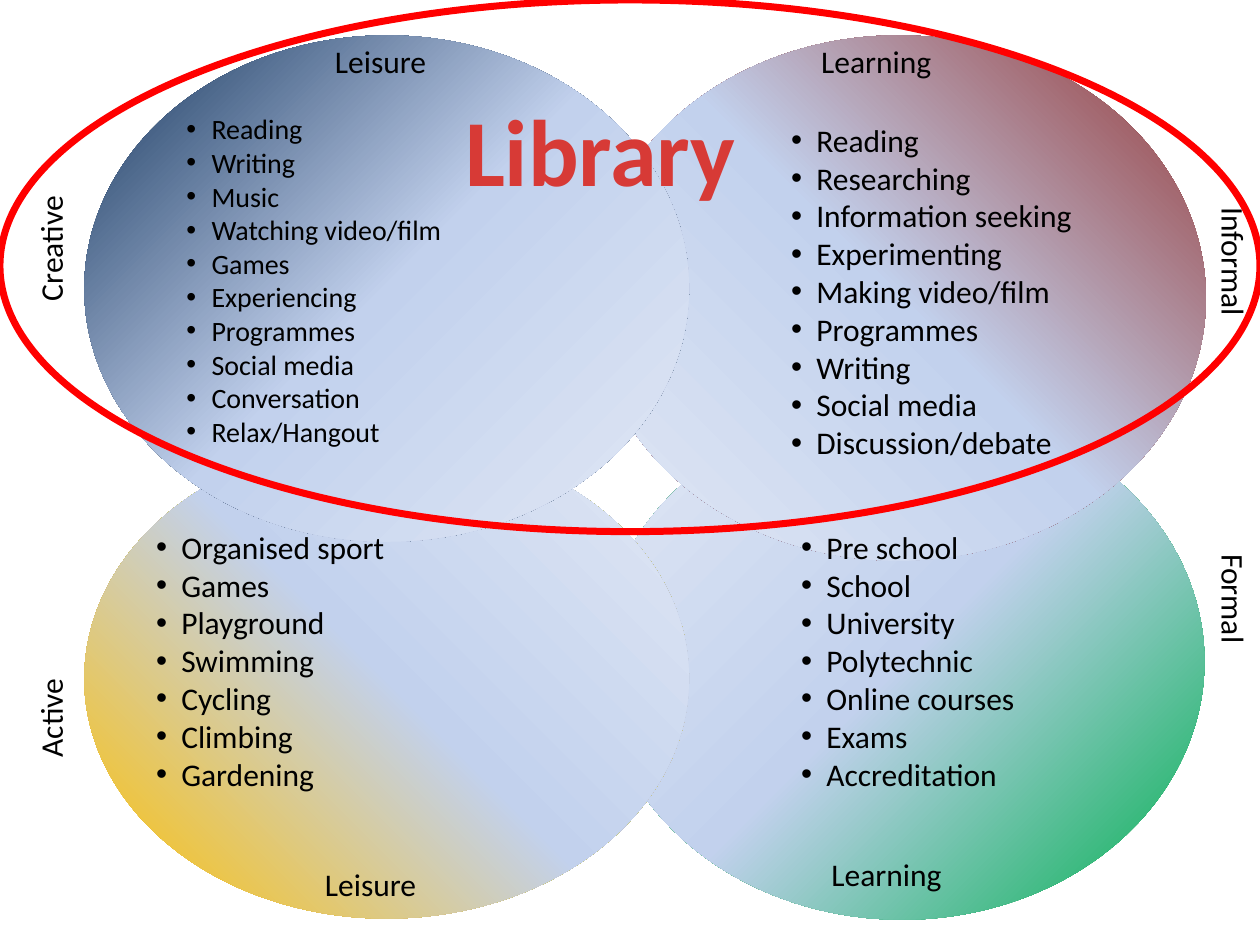
from copy import deepcopy
from dataclasses import dataclass

from lxml import etree
from pptx import Presentation
from pptx import util as u
from pptx.dml.color import RGBColor
from pptx.enum import shapes, text
from pptx.oxml.ns import qn


@dataclass(frozen=True)
class Theme:
    font: str = "Calibri"
    ink: str = "000000"
    ring: str = "FF0000"
    title: str = "D73A36"
    mid: str = "C2D1ED"
    pale: str = "E1E8F5"
    small: float = 16
    body: float = 18
    large: float = 54
    edge: float = 4
    rim: float = 1.42
    hang: float = 14.4


@dataclass(frozen=True)
class Box:
    x: float
    y: float
    w: float
    h: float

    def place(self) -> tuple:
        return tuple(u.Pt(v) for v in (self.x, self.y, self.w, self.h))


@dataclass(frozen=True)
class Circle:
    box: Box
    hue: str
    angle: float


@dataclass(frozen=True)
class Label:
    words: str
    box: Box
    turn: str = "horz"


@dataclass(frozen=True)
class Topic:
    items: tuple
    box: Box
    size: float


THEME = Theme()

CIRCLES = (
    Circle(Box(342.7, 230.4, 345.6, 295.2), "00B050", 135),
    Circle(Box(48.2, 250.6, 345.6, 274.3), "FFC000", 45),
    Circle(Box(337.7, 20.2, 351.4, 300.2), "953735", 225),
    Circle(Box(48.2, 20.2, 345.6, 289.4), "17375E", 315),
)

LABELS = (
    Label("Learning", Box(462.2, 20.2, 102.2, 29.1)),
    Label("Leisure", Box(184.3, 20.2, 147.6, 29.1)),
    Label("Creative", Box(14.4, 66.2, 36.4, 113), "vert270"),
    Label("Active", Box(14.4, 326.9, 36.4, 113), "vert270"),
    Label("Informal", Box(683.3, 111.6, 36.4, 102.2), "vert"),
    Label("Formal", Box(683.3, 309.6, 36.4, 102.2), "vert"),
    Label("Leisure", Box(178.6, 491, 147.6, 29.1)),
    Label("Learning", Box(468, 485.3, 102.2, 29.1)),
)

TOPICS = (
    Topic(("Reading", "Writing", "Music", "Watching video/film", "Games",
           "Experiencing", "Programmes", "Social media", "Conversation",
           "Relax/Hangout"), Box(99.4, 60.5, 215.3, 223.2), THEME.small),
    Topic(("Reading", "Researching", "Information seeking", "Experimenting",
           "Making video/film", "Programmes", "Writing", "Social media",
           "Discussion/debate"), Box(445, 65.5, 215.3, 225.4), THEME.body),
    Topic(("Organised sport", "Games", "Playground", "Swimming", "Cycling",
           "Climbing", "Gardening"), Box(82.1, 298.1, 215.3, 181.4), THEME.body),
    Topic(("Pre school", "School", "University", "Polytechnic",
           "Online courses", "Exams", "Accreditation"),
          Box(450.7, 298.1, 215.3, 181.4), THEME.body),
)

RING = Box(0, 0, 720, 303.8)
TITLE = Box(257.8, 49, 170.6, 72.7)


def add_oval(slide, box: Box):
    oval = slide.shapes.add_shape(shapes.MSO_SHAPE.OVAL, *box.place())
    oval.shadow.inherit = False
    return oval


def draw_circle(slide, circle: Circle) -> None:
    oval = add_oval(slide, circle.box)
    oval.line.fill.background()
    oval.fill.gradient()
    oval.fill.gradient_angle = circle.angle
    stops = oval._element.spPr.find(".//" + qn("a:gsLst"))
    stops.append(deepcopy(stops[0]))
    hues = (circle.hue, THEME.mid, THEME.pale)
    for stop, hue, spot in zip(oval.fill.gradient_stops, hues, (0, 0.5, 1)):
        stop.color.rgb = RGBColor.from_string(hue)
        stop.position = spot


def draw_ring(slide, box: Box) -> None:
    oval = add_oval(slide, box)
    oval.fill.background()
    oval.line.color.rgb = RGBColor.from_string(THEME.ring)
    oval.line.width = u.Pt(THEME.edge)


def write(slide, box: Box, words: str, size: float, hue: str = THEME.ink):
    frame = slide.shapes.add_textbox(*box.place()).text_frame
    frame.word_wrap = True
    frame.auto_size = text.MSO_AUTO_SIZE.SHAPE_TO_FIT_TEXT
    frame.text = words
    for para in frame.paragraphs:
        for run in para.runs:
            run.font.name = THEME.font
            run.font.size = u.Pt(size)
            run.font.color.rgb = RGBColor.from_string(hue)
    return frame


def draw_label(slide, label: Label) -> None:
    frame = write(slide, label.box, label.words, THEME.body)
    frame._txBody.bodyPr.set("vert", label.turn)


def draw_topic(slide, topic: Topic) -> None:
    frame = write(slide, topic.box, "\n".join(topic.items), topic.size)
    hang = u.Pt(THEME.hang)
    for para in frame.paragraphs:
        props = para._p.get_or_add_pPr()
        props.set("marL", str(hang))
        props.set("indent", str(-hang))
        etree.SubElement(props, qn("a:buFont"), typeface="Arial")
        etree.SubElement(props, qn("a:buChar"), char="•")


def draw_title(slide, words: str) -> None:
    frame = write(slide, TITLE, words, THEME.large, THEME.title)
    frame.word_wrap = False
    para = frame.paragraphs[0]
    para.alignment = text.PP_ALIGN.CENTER
    font = para.runs[0].font
    font.bold = True
    props = para.runs[0]._r.get_or_add_rPr()
    rim = etree.Element(qn("a:ln"), w=str(u.Pt(THEME.rim)))
    rim.append(deepcopy(props.find(qn("a:solidFill"))))
    props.insert(0, rim)


def main() -> None:
    deck = Presentation()
    deck.slide_width, deck.slide_height = u.Pt(720), u.Pt(540)
    slide = deck.slides.add_slide(deck.slide_layouts[6])
    for circle in CIRCLES:
        draw_circle(slide, circle)
    for label in LABELS:
        draw_label(slide, label)
    for topic in TOPICS:
        draw_topic(slide, topic)
    draw_ring(slide, RING)
    draw_title(slide, "Library")
    deck.save("out.pptx")


if __name__ == "__main__":
    main()
